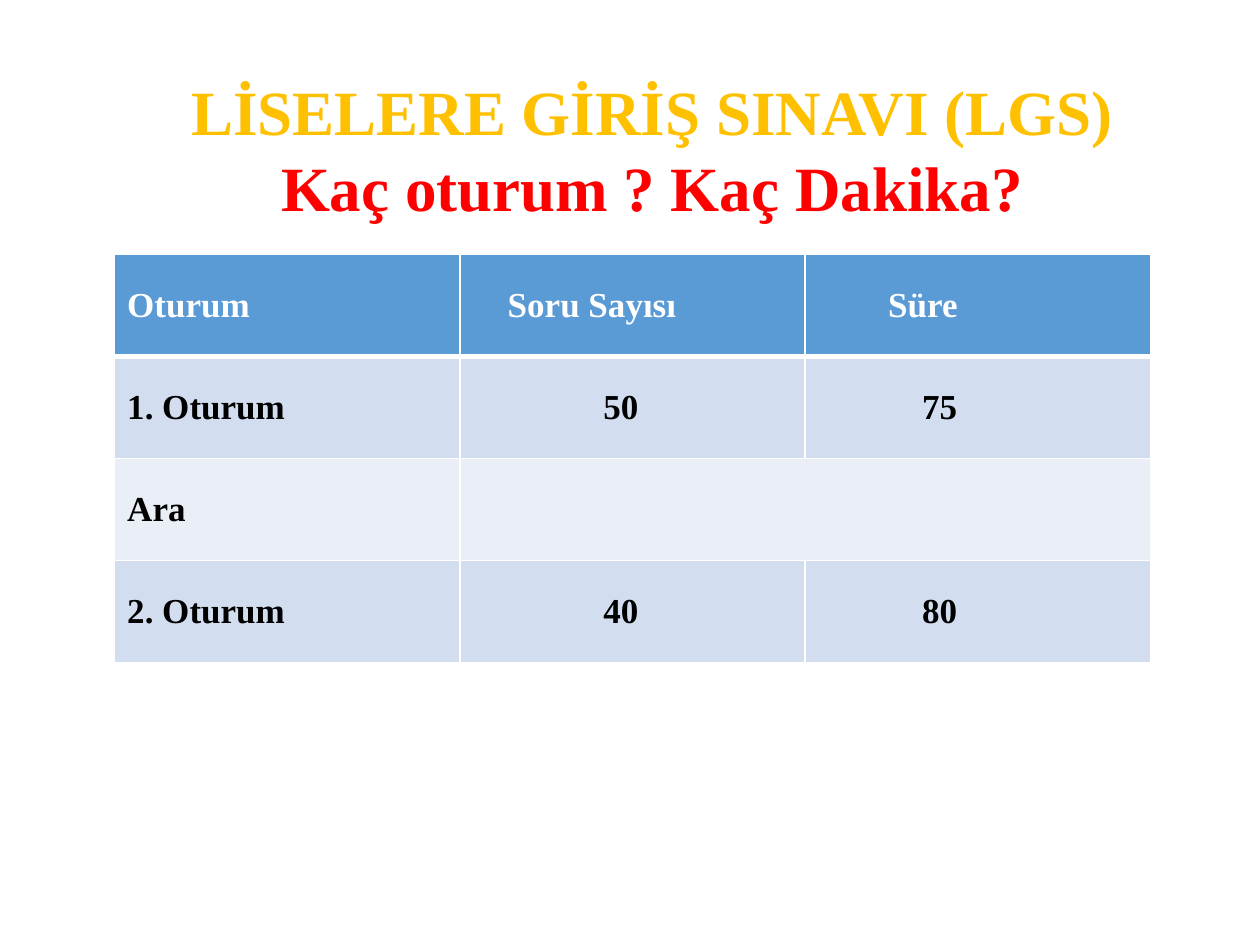
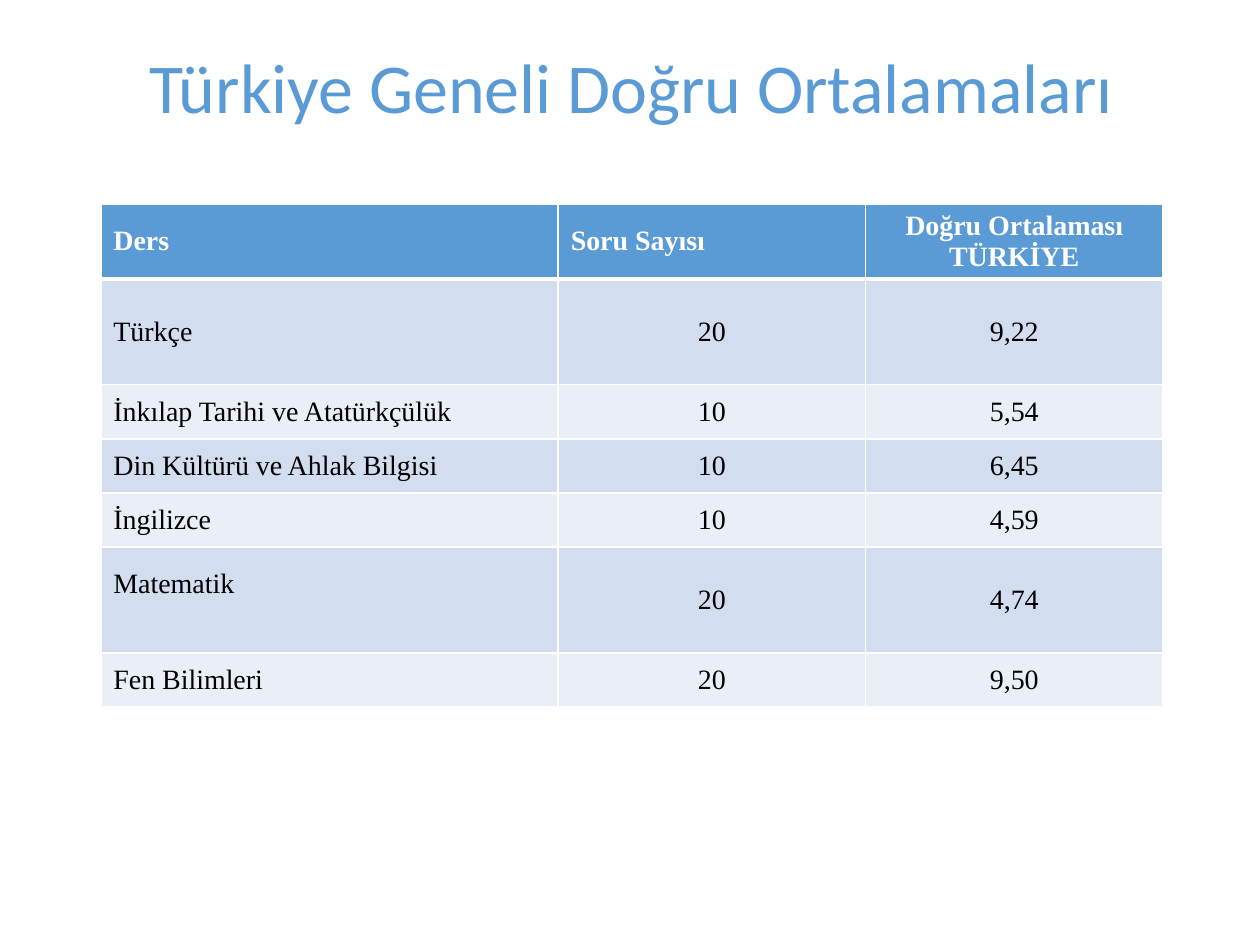
from dataclasses import dataclass

from lxml.etree import SubElement
from pptx import Presentation
from pptx.dml.color import RGBColor as Color
from pptx.enum.text import MSO_ANCHOR as Anchor, MSO_AUTO_SIZE as AutoSize, PP_ALIGN as Align
from pptx.oxml.ns import qn
from pptx.util import Inches, Pt


@dataclass(frozen=True)
class Theme:
    blue: str = "5B9BD5"
    gold: str = "FFC000"
    red: str = "FF0000"
    white: str = "FFFFFF"
    black: str = "000000"
    bands: tuple = ("D2DEEF", "EAEFF7")
    serif: str = "Times New Roman"
    sans: str = "Calibri"
    exam_title: int = 36
    score_title: int = 40
    exam_text: int = 20
    score_text: int = 16
    grid_line: int = 1
    header_line: int = 3


THEME = Theme()
SLIDE_SIZE = (10, 7.5)
SIDE_MARGIN, EDGE_MARGIN = 0.1, 0.03

# Content
EXAM_TITLE = [("LİSELERE GİRİŞ SINAVI (LGS)", THEME.gold),
              ("Kaç oturum ? Kaç Dakika?", THEME.red)]
EXAM_ROWS = [
    ("Oturum", "Soru Sayısı", "Süre"),
    ("1. Oturum", "50", "75"),
    ("Ara", "", ""),
    ("2. Oturum", "40", "80"),
]
SCORE_TITLE = [("Türkiye Geneli Doğru Ortalamaları", THEME.blue)]
SCORE_ROWS = [
    ("Ders", "Soru Sayısı", "Doğru Ortalaması TÜRKİYE"),
    ("Türkçe", "20", "9,22"),
    ("İnkılap Tarihi ve Atatürkçülük", "10", "5,54"),
    ("Din Kültürü ve Ahlak Bilgisi", "10", "6,45"),
    ("İngilizce", "10", "4,59"),
    ("Matematik", "20", "4,74"),
    ("Fen Bilimleri", "20", "9,50"),
]

# Layout, in inches
EXAM_COLUMNS = [2.74] * 3
EXAM_HEIGHTS = [0.81] * len(EXAM_ROWS)
EXAM_HEADER_INDENTS = (0, 0.28, 0.56)
EXAM_BODY_INDENTS = (0, 1.04, 0.83)
SCORE_COLUMNS = [3.63, 2.44, 2.36]
TALL_SUBJECTS = ("Türkçe", "Matematik")
SCORE_HEIGHTS = [0.59] + [0.84 if row[0] in TALL_SUBJECTS else 0.43 for row in SCORE_ROWS[1:]]


def add_span(para, text, font, size, color, bold):
    span = para.add_run()
    span.text = text
    span.font.name, span.font.size, span.font.bold = font, Pt(size), bold
    span.font.color.rgb = Color.from_string(color)


def add_page(deck, lines, box, font, size, bold):
    """Add a title-only page whose title has one colour per line."""
    page = deck.slides.add_slide(deck.slide_layouts[5])
    title = page.shapes.title
    title.left, title.top, title.width, title.height = map(Inches, box)
    frame = title.text_frame
    frame.word_wrap = True
    frame.auto_size = AutoSize.SHAPE_TO_FIT_TEXT
    para = frame.paragraphs[0]
    para.alignment = Align.CENTER
    for number, (text, color) in enumerate(lines):
        if number:
            para.add_line_break()
        add_span(para, text, font, size, color, bold)
    return page


def set_borders(cell, row):
    """Draw white grid lines, with a thicker one under the header."""
    properties = cell._tc.get_or_add_tcPr()
    widths = {"lnL": THEME.grid_line, "lnR": THEME.grid_line,
              "lnT": THEME.header_line if row == 1 else THEME.grid_line,
              "lnB": THEME.header_line if row == 0 else THEME.grid_line}
    for side, width in widths.items():
        line = SubElement(properties, qn(f"a:{side}"), w=str(Pt(width)))
        fill = SubElement(line, qn("a:solidFill"))
        SubElement(fill, qn("a:srgbClr"), val=THEME.white)


def add_grid(page, rows, left, top, columns, heights, size, bold_body):
    """Add a banded table and return it for local adjustments."""
    frame = page.shapes.add_table(len(rows), len(columns), Inches(left), Inches(top),
                                  Inches(sum(columns)), Inches(sum(heights)))
    table = frame.table
    for column, width in zip(table.columns, columns):
        column.width = Inches(width)
    for r, (texts, height) in enumerate(zip(rows, heights)):
        table.rows[r].height = Inches(height)
        header = r == 0
        for c, text in enumerate(texts):
            cell = table.cell(r, c)
            set_borders(cell, r)
            cell.fill.solid()
            cell.fill.fore_color.rgb = Color.from_string(
                THEME.blue if header else THEME.bands[(r - 1) % 2])
            cell.vertical_anchor = Anchor.MIDDLE
            cell.margin_left = cell.margin_right = Inches(SIDE_MARGIN)
            cell.margin_top = cell.margin_bottom = Inches(EDGE_MARGIN)
            if text:
                add_span(cell.text_frame.paragraphs[0], text, THEME.serif, size,
                         THEME.white if header else THEME.black, header or bold_body)
    return table


def build_exam_page(deck):
    page = add_page(deck, EXAM_TITLE, (1.35, 0.52, 7.8, 1.31),
                    THEME.serif, THEME.exam_title, True)
    frame = page.shapes.title.text_frame
    frame.margin_right = Inches(0.25)
    frame.paragraphs[0].line_spacing = Pt(43.5)
    table = add_grid(page, EXAM_ROWS, 0.91, 2.02, EXAM_COLUMNS, EXAM_HEIGHTS,
                     THEME.exam_text, True)
    for r in range(len(EXAM_ROWS)):
        indents = EXAM_BODY_INDENTS if r else EXAM_HEADER_INDENTS
        for c, indent in enumerate(indents):
            table.cell(r, c).margin_left = Inches(SIDE_MARGIN + indent)
    # The break has neither questions nor a duration
    table.cell(2, 1).merge(table.cell(2, 2))


def build_score_page(deck):
    page = add_page(deck, SCORE_TITLE, (0.51, 0.29, 9, 0.77),
                    THEME.sans, THEME.score_title, False)
    table = add_grid(page, SCORE_ROWS, 0.8, 1.62, SCORE_COLUMNS, SCORE_HEIGHTS,
                     THEME.score_text, False)
    # Numbers and the last heading are centred
    for r in range(len(SCORE_ROWS)):
        for c in (1, 2):
            if r or c == 2:
                table.cell(r, c).text_frame.paragraphs[0].alignment = Align.CENTER
    # Mathematics sits a little above the middle of its row
    table.cell(5, 0).margin_bottom = Inches(EDGE_MARGIN + 0.25)


def main():
    deck = Presentation()
    deck.slide_width, deck.slide_height = map(Inches, SLIDE_SIZE)
    build_exam_page(deck)
    build_score_page(deck)
    deck.save("out.pptx")


if __name__ == "__main__":
    main()
